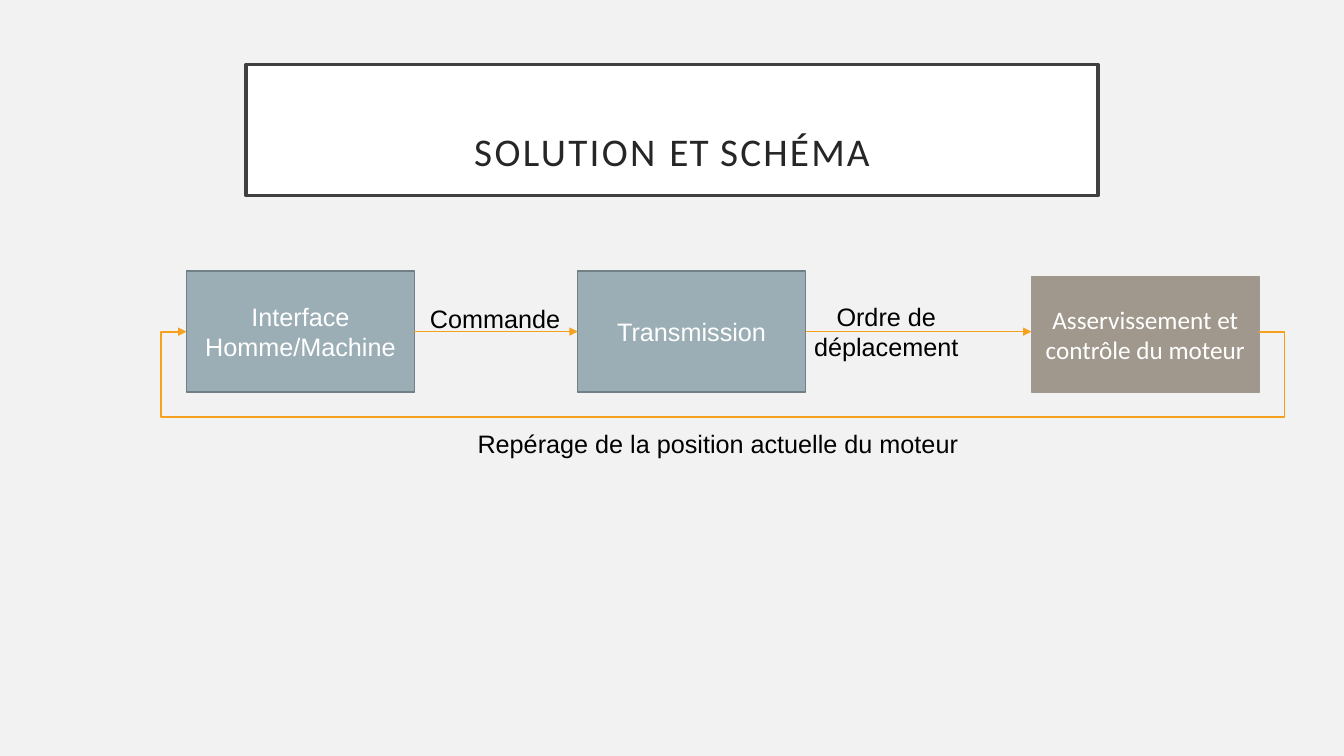
from dataclasses import dataclass

import pptx
import pptx.dml.color
import pptx.enum.shapes
import pptx.enum.text
import pptx.oxml
import pptx.oxml.ns
import pptx.util

Inches = pptx.util.Inches
Pt = pptx.util.Pt
RGBColor = pptx.dml.color.RGBColor
ALIGN = pptx.enum.text.PP_ALIGN
ANCHOR = pptx.enum.text.MSO_ANCHOR

BACKGROUND = RGBColor(0xF2, 0xF2, 0xF2)
WHITE = RGBColor(0xFF, 0xFF, 0xFF)
BLACK = RGBColor(0, 0, 0)
FRAME = RGBColor(0x40, 0x40, 0x40)
TITLE = RGBColor(0x26, 0x26, 0x26)
BLUE_GREY = RGBColor(0x9B, 0xAE, 0xB5)
BLUE_GREY_EDGE = RGBColor(0x70, 0x80, 0x84)
TAUPE = RGBColor(0xA0, 0x98, 0x8C)
ORANGE = RGBColor(0xF6, 0xA1, 0x1D)

FLOW_Y = 3.29
RETURN_Y = 4.14
SIDE_GAP = 0.25
BOX_WIDTH = 2.26
BOX_BOTTOM = 3.89


@dataclass
class Block:
    text: str
    left: float
    top: float
    fill: RGBColor
    edge: RGBColor
    font: str


@dataclass
class Label:
    text: str
    left: float
    top: float
    width: float
    height: float


BLOCKS = [
    Block("Interface Homme/Machine", 1.85, 2.69, BLUE_GREY, BLUE_GREY_EDGE, "Arial"),
    Block("Transmission", 5.73, 2.69, BLUE_GREY, BLUE_GREY_EDGE, "Arial"),
    Block("Asservissement et contrôle du moteur", 10.23, 2.75, TAUPE, TAUPE, "Calibri"),
]
LABELS = [
    Label("Commande", 4.2, 3.01, 1.42, 0.3),
    Label("Ordre de déplacement", 8.04, 2.99, 1.5, 0.6),
    Label("Repérage de la position actuelle du moteur", 4.62, 4.25, 5, 0.3),
]


def add_span(para, text: str, font: str, size: float, color: RGBColor):
    span = para.add_run()
    span.text = text
    span.font.name = font
    span.font.size = Pt(size)
    span.font.color.rgb = color
    return span


def set_margins(frame, side: float, top: float = 0) -> None:
    frame.margin_left = frame.margin_right = Inches(side)
    frame.margin_top = Inches(top)
    frame.margin_bottom = 0
    frame.word_wrap = True


def add_block(page, block: Block):
    box = page.shapes.add_shape(
        pptx.enum.shapes.MSO_SHAPE.RECTANGLE, Inches(block.left), Inches(block.top),
        Inches(BOX_WIDTH), Inches(BOX_BOTTOM - block.top))
    box.shadow.inherit = False
    box.fill.solid()
    box.fill.fore_color.rgb = block.fill
    box.line.color.rgb = block.edge
    box.line.width = Pt(1)
    set_margins(box.text_frame, 0.1)
    box.text_frame.vertical_anchor = ANCHOR.MIDDLE
    para = box.text_frame.paragraphs[0]
    para.alignment = ALIGN.CENTER
    add_span(para, block.text, block.font, 18, WHITE)
    return box


def add_label(page, label: Label) -> None:
    box = page.shapes.add_textbox(
        Inches(label.left), Inches(label.top), Inches(label.width), Inches(label.height))
    set_margins(box.text_frame, 0)
    para = box.text_frame.paragraphs[0]
    para.alignment = ALIGN.CENTER
    add_span(para, label.text, "Arial", 18, BLACK)


def style_arrow(shape) -> None:
    shape.line.color.rgb = ORANGE
    shape.line.width = Pt(1.25)
    line = shape.line._get_or_add_ln()
    pptx.oxml.ns.qn("a:tailEnd")
    line.append(pptx.oxml.parse_xml(
        '<a:tailEnd xmlns:a="http://schemas.openxmlformats.org/drawingml/2006/main"'
        ' type="triangle" w="med" len="med"/>'))


def add_arrow(page, source, source_right: float, target_left: float):
    arrow = page.shapes.add_connector(
        pptx.enum.shapes.MSO_CONNECTOR.STRAIGHT, Inches(source_right), Inches(FLOW_Y),
        Inches(target_left), Inches(FLOW_Y))
    arrow.begin_connect(source, 3)
    style_arrow(arrow)
    arrow._element.spPr.append(pptx.oxml.parse_xml(
        '<a:effectLst xmlns:a="http://schemas.openxmlformats.org/drawingml/2006/main"/>'))
    return arrow


def add_return_path(page, start: float, end: float) -> None:
    right, left = start + SIDE_GAP, end - SIDE_GAP
    corners = [(right, FLOW_Y), (right, RETURN_Y), (left, RETURN_Y),
               (left, FLOW_Y), (end, FLOW_Y)]
    builder = page.shapes.build_freeform(Inches(start), Inches(FLOW_Y))
    builder.add_line_segments([(Inches(x), Inches(y)) for x, y in corners], close=False)
    outline = builder.convert_to_shape()
    outline.shadow.inherit = False
    outline.fill.background()
    style_arrow(outline)


def add_title(page) -> None:
    title = page.shapes.title
    title.left, title.top = Inches(2.44), Inches(0.64)
    title.width, title.height = Inches(8.45), Inches(1.3)
    title.fill.solid()
    title.fill.fore_color.rgb = WHITE
    title.line.color.rgb = FRAME
    title.line.width = Pt(2.5)
    set_margins(title.text_frame, 0, top=0.42)
    title.text_frame.vertical_anchor = ANCHOR.MIDDLE
    para = title.text_frame.paragraphs[0]
    para.alignment = ALIGN.CENTER
    for text, spacing in [("SOLUTION ", 170), ("ET ", 90), ("SCHÉMA", 160)]:
        span = add_span(para, text, "Calibri", 28, TITLE)
        span.font._element.set("spc", str(spacing))


def main() -> None:
    deck = pptx.Presentation()
    deck.slide_width, deck.slide_height = Inches(13.33), Inches(7.5)
    page = deck.slides.add_slide(deck.slide_layouts[5])
    page.background.fill.solid()
    page.background.fill.fore_color.rgb = BACKGROUND
    add_title(page)

    # Blocks of the control chain
    boxes = [add_block(page, block) for block in BLOCKS]

    # Forward arrows; the last block's middle lies below the flow line
    for index, target in enumerate(BLOCKS[1:]):
        arrow = add_arrow(page, boxes[index], BLOCKS[index].left + BOX_WIDTH, target.left)
        if target.top == BLOCKS[index].top:
            arrow.end_connect(boxes[index + 1], 1)

    # Feedback from the motor to the interface
    add_return_path(page, BLOCKS[-1].left + BOX_WIDTH, BLOCKS[0].left)

    # Labels
    for label in LABELS:
        add_label(page, label)

    deck.save("out.pptx")


if __name__ == "__main__":
    main()
